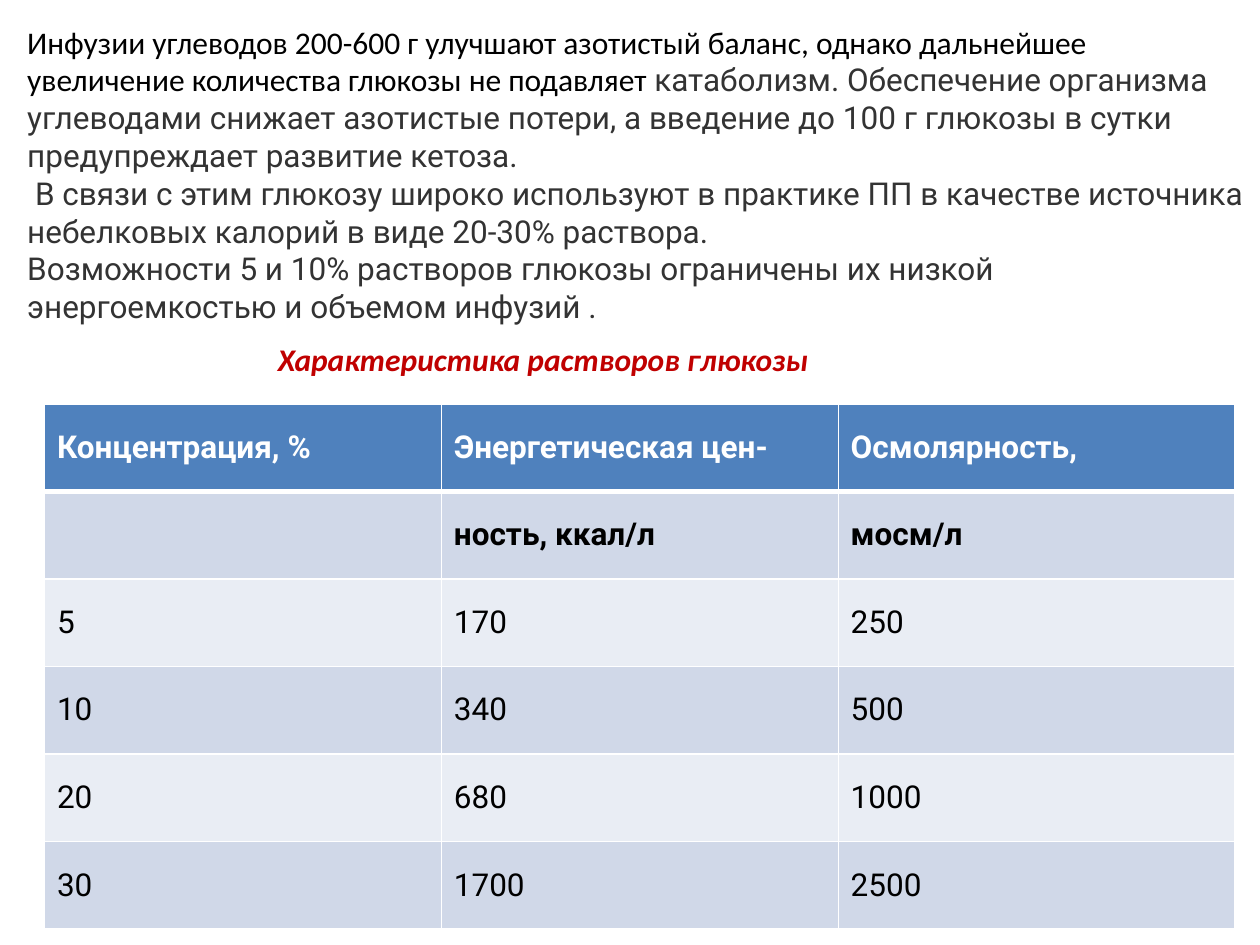
from lxml.etree import SubElement
from pptx import Presentation
from pptx.dml.color import RGBColor
from pptx.enum.text import MSO_ANCHOR as Anchor, MSO_AUTO_SIZE as AutoSize, PP_ALIGN as Align
from pptx.oxml.ns import qn
from pptx.util import Cm, Pt

BLACK, GREY, WHITE, RED = "000000", "333333", "FFFFFF", "C00000"
HEADER, BAND_DARK, BAND_LIGHT = "4F81BD", "D0D8E8", "E9EDF4"

INTRO = [
    [("Инфузии углеводов 200-600 г улучшают азотистый баланс, однако дальнейшее "
      "увеличение количества глюкозы не подавляет ", "Calibri", BLACK),
     ("катаболизм. Обеспечение организма углеводами снижает азотистые потери, "
      "а введение до 100 г глюкозы в сутки предупреждает развитие кетоза.", "Roboto", GREY)],
    [(" В связи с этим глюкозу широко используют в практике ПП в качестве "
      "источника небелковых калорий в виде 20-30% раствора.", "Roboto", GREY)],
    [("Возможности 5 и 10% растворов глюкозы ограничены их низкой "
      "энергоемкостью и объемом инфузий .", "Roboto", GREY)],
]
SOLUTIONS = [
    ["Концентрация, %", "Энергетическая цен-", "Осмолярность,"],
    ["", "ность, ккал/л", "мосм/л"],
    ["5", "170", "250"],
    ["10", "340", "500"],
    ["20", "680", "1000"],
    ["30", "1700", "2500"],
]


def rgb(value):
    return RGBColor.from_string(value)


def add_run(paragraph, text, font, color, bold=False, italic=False):
    run = paragraph.add_run()
    run.text = text
    run.font.name, run.font.size = font, Pt(18)
    run.font.bold, run.font.italic = bold, italic
    run.font.color.rgb = rgb(color)


def add_intro(slide):
    frame = slide.shapes.add_textbox(Cm(0.3), Cm(0.33), Cm(25.1), Cm(6.4)).text_frame
    frame.word_wrap = True
    frame.auto_size = AutoSize.SHAPE_TO_FIT_TEXT
    for index, runs in enumerate(INTRO):
        paragraph = frame.add_paragraph() if index else frame.paragraphs[0]
        for text, font, color in runs:
            add_run(paragraph, text, font, color)


def set_title(slide, text):
    title = slide.shapes.title
    title.left, title.top, title.width, title.height = Cm(4.09), Cm(6.73), Cm(13.72), Cm(1.02)
    frame = title.text_frame
    frame.word_wrap = True
    frame.auto_size = AutoSize.SHAPE_TO_FIT_TEXT
    frame.vertical_anchor = Anchor.TOP
    paragraph = frame.paragraphs[0]
    paragraph.alignment = Align.CENTER
    add_run(paragraph, text, "Calibri", RED, bold=True, italic=True)


def set_borders(cell, top, bottom):
    properties = cell._tc.get_or_add_tcPr()
    for side, width in (("L", 1), ("R", 1), ("T", top), ("B", bottom)):
        line = SubElement(properties, qn(f"a:ln{side}"), w=str(Pt(width)))
        SubElement(SubElement(line, qn("a:solidFill")), qn("a:srgbClr"), val=WHITE)


def format_cell(cell, text, row):
    # A thick rule separates the header from the body
    set_borders(cell, top=3 if row == 1 else 1, bottom=3 if row == 0 else 1)
    cell.fill.solid()
    cell.fill.fore_color.rgb = rgb(
        HEADER if row == 0 else BAND_DARK if row % 2 else BAND_LIGHT)
    cell.vertical_anchor = Anchor.MIDDLE
    cell.margin_left = cell.margin_right = cell.margin_top = cell.margin_bottom = Cm(0.25)
    if text:
        add_run(cell.text_frame.paragraphs[0], text, "Roboto",
                BLACK if row else WHITE, bold=row < 2)


def add_solutions_table(slide):
    table = slide.shapes.add_table(len(SOLUTIONS), len(SOLUTIONS[0]),
                                   Cm(0.9), Cm(8.14), Cm(24), Cm(10.59)).table
    for row, texts in enumerate(SOLUTIONS):
        for column, text in enumerate(texts):
            format_cell(table.cell(row, column), text, row)


def main():
    deck = Presentation()
    deck.slide_width, deck.slide_height = Cm(25.4), Cm(19.05)
    slide = deck.slides.add_slide(deck.slide_layouts[5])  # title only
    add_intro(slide)
    set_title(slide, "Характеристика растворов глюкозы")
    add_solutions_table(slide)
    deck.save("out.pptx")


if __name__ == "__main__":
    main()
